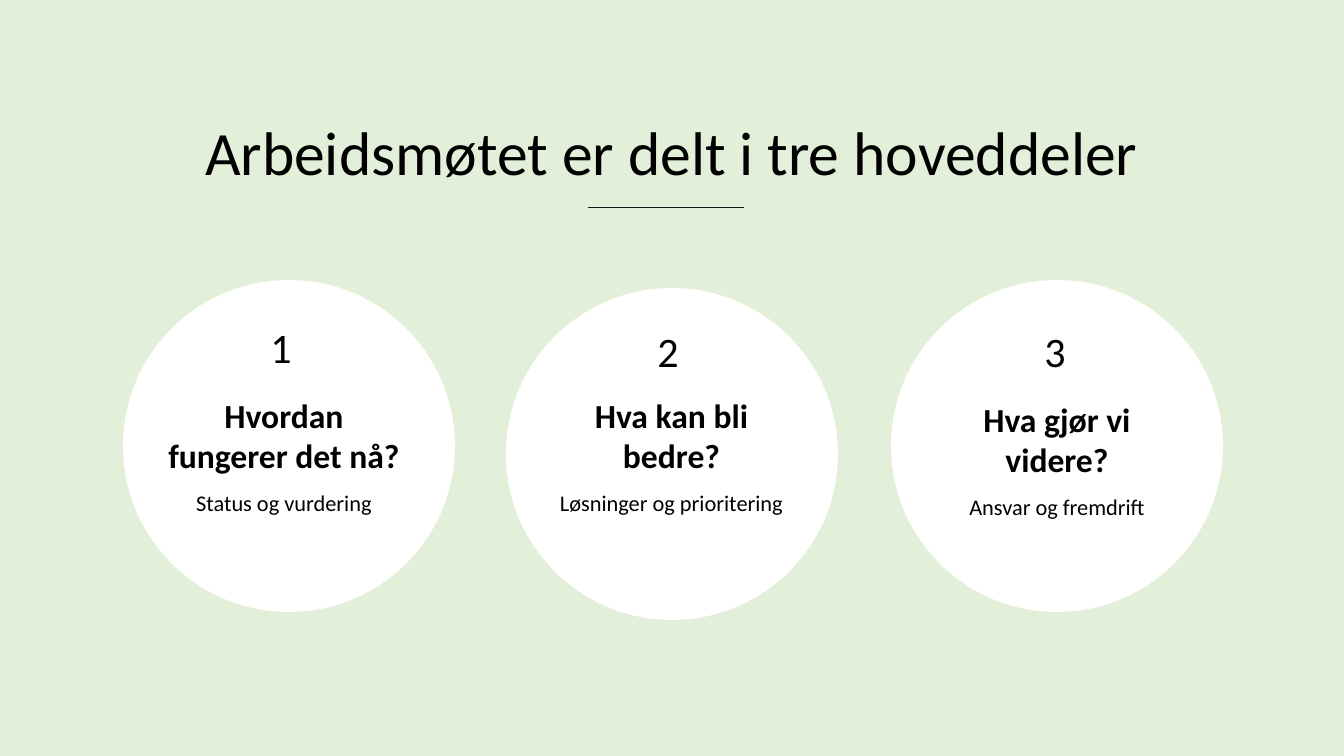
from lxml import etree
from pptx import Presentation, util as u
from pptx.dml.color import RGBColor
from pptx.enum import shapes, text
from pptx.oxml.ns import qn

COLORS = {"background": "E2F0D9", "circle": "FFFFFF", "text": "000000", "rule": "181717"}
FONT = "Calibri"
CIRCLE_SIZE = 332
NUMBER_LEFT, NUMBER_STEP = 139, 387
PARTS = [
    ("Hvordan fungerer det nå?", "Status og vurdering", (123, 280), (157, 390, 254, 128), 317),
    ("Hva kan bli bedre?", "Løsninger og prioritering", (506, 288), (543, 390, 257, 128), 321),
    ("Hva gjør vi videre?", "Ansvar og fremdrift", (891, 280), (937, 394, 240, 128), 321),
]


def px(value):
    return u.Emu(round(value * 914400 / 100.8))


class SlideBuilder:
    """Holds the style and the current slide and draws each kind of element."""

    def __init__(self, presentation):
        self.slide = presentation.slides.add_slide(presentation.slide_layouts[6])
        fill = self.slide.background.fill
        fill.solid()
        fill.fore_color.rgb = self.color("background")

    def color(self, name):
        return RGBColor.from_string(COLORS[name])

    def circle(self, left, top, size):
        shape = self.slide.shapes.add_shape(
            shapes.MSO_SHAPE.OVAL, px(left), px(top), px(size), px(size))
        shape.shadow.inherit = False
        shape.fill.solid()
        shape.fill.fore_color.rgb = self.color("circle")
        shape.line.fill.background()

    def rule(self, left, right, top):
        connector = self.slide.shapes.add_connector(
            shapes.MSO_CONNECTOR.STRAIGHT, px(left), px(top), px(right), px(top))
        connector.line.color.rgb = self.color("rule")
        connector.line.width = u.Pt(0.5)
        etree.SubElement(connector._element.spPr, qn("a:effectLst"))

    def text(self, box, lines, anchor=text.MSO_ANCHOR.TOP, grow=True):
        shape = self.slide.shapes.add_textbox(*map(px, box))
        frame = shape.text_frame
        frame.word_wrap = True
        frame.vertical_anchor = anchor
        frame.auto_size = (text.MSO_AUTO_SIZE.SHAPE_TO_FIT_TEXT if grow
                           else text.MSO_AUTO_SIZE.NONE)
        frame.text = "\n".join(line[0] for line in lines)
        for paragraph, (_, size, bold, spacing) in zip(frame.paragraphs, lines):
            paragraph.alignment = text.PP_ALIGN.CENTER
            paragraph.line_spacing = spacing
            for run in paragraph.runs:
                run.font.name = FONT
                run.font.size = u.Pt(size)
                run.font.bold = bold
                run.font.color.rgb = self.color("text")


def main():
    presentation = Presentation()
    presentation.slide_width, presentation.slide_height = px(1344), px(756)
    builder = SlideBuilder(presentation)
    builder.text((0, 69, 1344, 125),
                 [("Arbeidsmøtet er delt i tre hoveddeler", 44, False, 0.9)],
                 text.MSO_ANCHOR.BOTTOM, grow=False)
    builder.rule(588, 744, 207)
    for index, (question, topic, corner, box, number_top) in enumerate(PARTS):
        builder.circle(*corner, CIRCLE_SIZE)
        builder.text(box, [(question, 24, True, 1.0), (topic, 16, False, 1.5)])
        builder.text((NUMBER_LEFT + index * NUMBER_STEP, number_top, 284, 61),
                     [(str(index + 1), 30, False, 1.0)])
    presentation.save("out.pptx")


if __name__ == "__main__":
    main()
